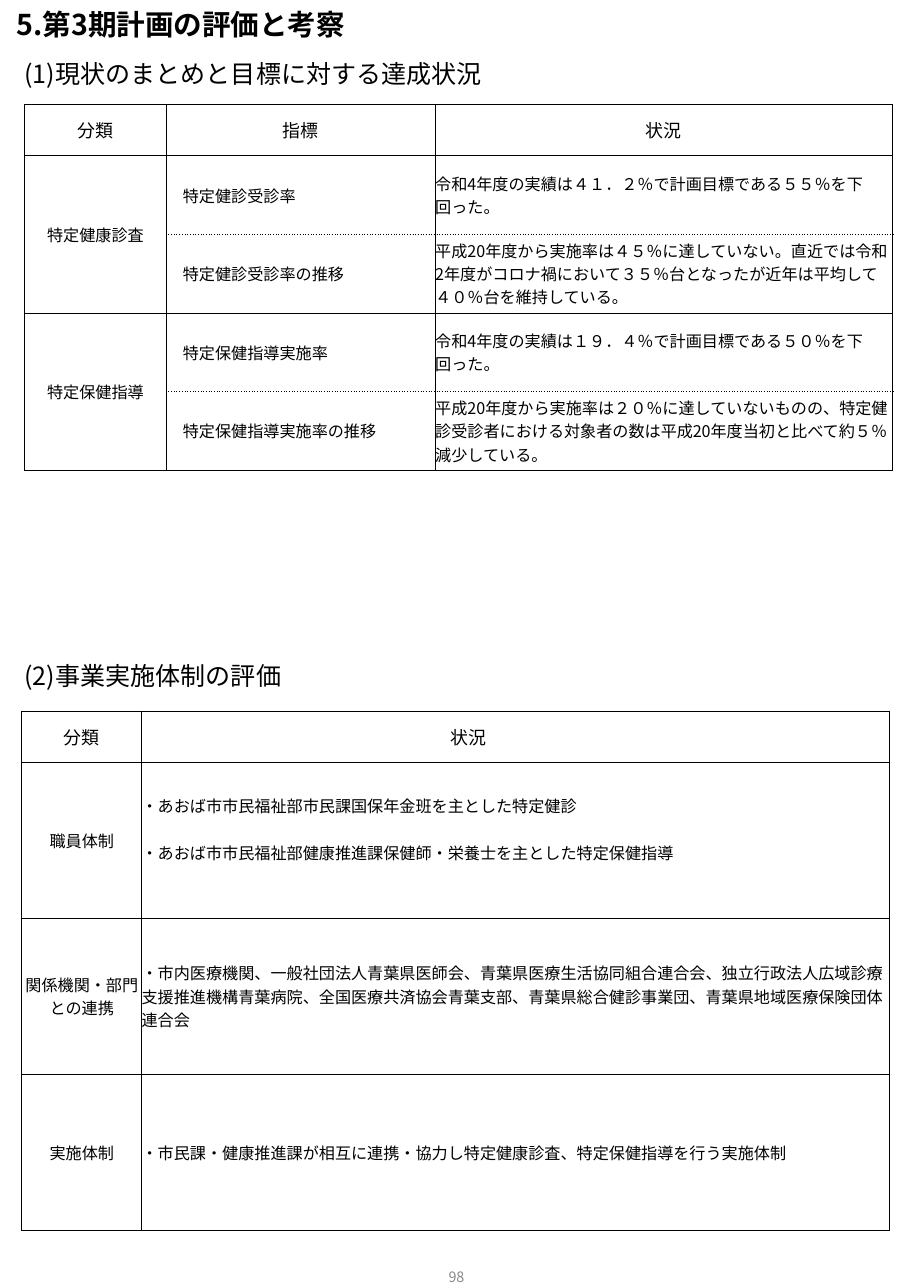
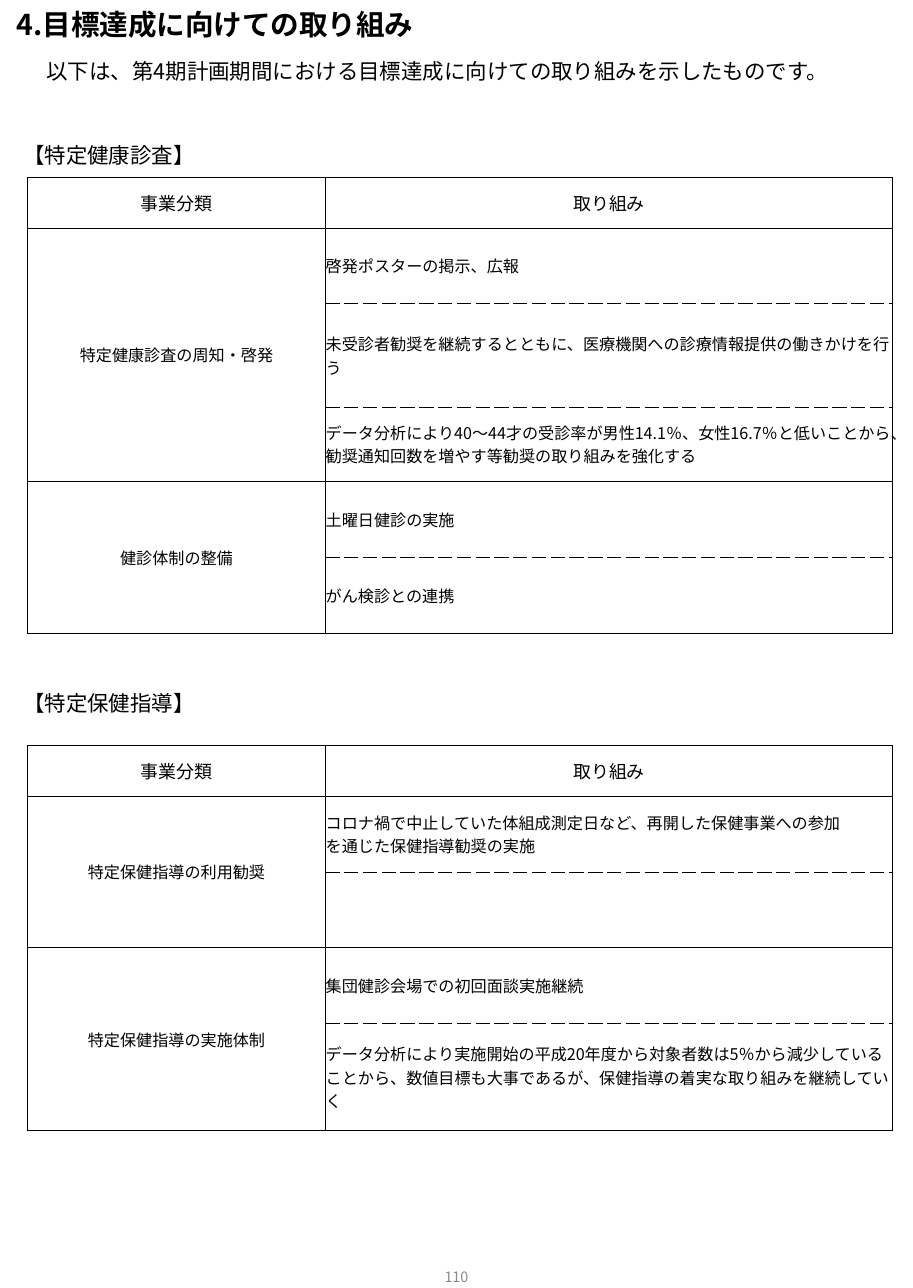
from pptx import Presentation
from pptx.dml.color import RGBColor
from pptx.enum.lang import MSO_LANGUAGE_ID
from pptx.enum.text import MSO_ANCHOR, PP_ALIGN
from pptx.oxml.ns import qn
from pptx.util import Inches, Pt
from lxml.etree import SubElement

BLACK = RGBColor(0x00, 0x00, 0x00)
PAGE_GRAY = RGBColor(0x89, 0x89, 0x89)
FONT = "Noto Sans CJK JP"
BORDER_WIDTH = Pt(0.5)
BLANK_LINE = Pt(13)
INDENT = 0.13


def add_run(paragraph, text, size, color=BLACK, bold=False):
    run = paragraph.add_run()
    run.text = text
    font = run.font
    font.size = Pt(size)
    font.bold = bold
    font.color.rgb = color
    font.name = FONT
    font.language_id = MSO_LANGUAGE_ID.JAPANESE
    SubElement(run._r.get_or_add_rPr(), qn("a:ea"), typeface=FONT)


def add_text(slide, text, left, top, width, height, size, color=BLACK, bold=False,
             align=PP_ALIGN.LEFT, anchor=MSO_ANCHOR.MIDDLE, inset=0, spacing=None):
    frame = slide.shapes.add_textbox(
        Inches(left), Inches(top), Inches(width), Inches(height)).text_frame
    frame.word_wrap = True
    frame.vertical_anchor = anchor
    frame.margin_left = Inches(inset)
    paragraph = frame.paragraphs[0]
    paragraph.alignment = align
    paragraph.line_spacing = spacing
    add_run(paragraph, text, size, color, bold)


def add_title(slide, text):
    add_text(slide, text, 0.13, 0, 6.9, 0.37, 16, bold=True)


def add_lead(slide, text, top, size, inset=0):
    add_text(slide, text, 0.19, top, 6.82, 0.36, size, align=PP_ALIGN.JUSTIFY,
             anchor=MSO_ANCHOR.TOP, inset=inset, spacing=1.25)


def add_label(slide, text, top):
    add_text(slide, text, 0.18, top, 6.32, 0.3, 12)


def add_page_number(slide, number):
    add_text(slide, str(number), 2.72, 9.65, 1.65, 0.53, 8, PAGE_GRAY,
             align=PP_ALIGN.CENTER, inset=0.1)


def set_borders(cell, top="solid", bottom="solid"):
    cell.fill.background()
    properties = cell._tc.get_or_add_tcPr()
    edges = {"lnL": "solid", "lnR": "solid", "lnT": top, "lnB": bottom}
    for position, (edge, dash) in enumerate(edges.items()):
        line = SubElement(properties, qn(f"a:{edge}"), w=str(BORDER_WIDTH))
        fill = SubElement(line, qn("a:solidFill"))
        SubElement(fill, qn("a:srgbClr"), val=str(BLACK))
        SubElement(line, qn("a:prstDash"), val=dash)
        properties.insert(position, line)


def fill_cell(cell, text, size=9, align=PP_ALIGN.LEFT, sides=0, ends=0, gap=0):
    cell.vertical_anchor = MSO_ANCHOR.MIDDLE
    cell.margin_left = cell.margin_right = Inches(sides)
    cell.margin_top = cell.margin_bottom = Inches(ends)
    for index, line in enumerate(text.split("\n")):
        frame = cell.text_frame
        paragraph = frame.add_paragraph() if index else frame.paragraphs[0]
        paragraph.alignment = align
        if index and gap:
            paragraph.space_before = gap
        if line:
            add_run(paragraph, line, size)


def add_grouped_table(slide, left, top, widths, heights, headers, groups,
                      divider="solid", gap=0):
    table = slide.shapes.add_table(
        len(heights), len(widths), Inches(left), Inches(top),
        Inches(sum(widths)), Inches(sum(heights))).table
    table.first_row = table.horz_banding = False
    for column, width in zip(table.columns, widths):
        column.width = Inches(width)
    for row, height in zip(table.rows, heights):
        row.height = Inches(height)
    for column, header in enumerate(headers):
        cell = table.cell(0, column)
        fill_cell(cell, header, 10, PP_ALIGN.CENTER, 0.04, 0.05)
        set_borders(cell)
    first = 1
    for category, entries in groups:
        last = first + len(entries) - 1
        for row, entry in enumerate(entries, first):
            set_borders(table.cell(row, 0))
            for column, text in enumerate(entry, 1):
                cell = table.cell(row, column)
                fill_cell(cell, text, gap=gap)
                set_borders(cell, "solid" if row == first else divider,
                            "solid" if row == last else divider)
        if last > first:
            table.cell(first, 0).merge(table.cell(last, 0))
        fill_cell(table.cell(first, 0), category, align=PP_ALIGN.CENTER)
        first = last + 1
    return table


def build_evaluation(slide):
    add_title(slide, "5.第3期計画の評価と考察")
    add_lead(slide, "(1)現状のまとめと目標に対する達成状況", 0.35, 14)
    achievements = [
        ("特定健康診査", [
            ("特定健診受診率",
             "令和4年度の実績は４１．２％で計画目標である５５％を下回った。"),
            ("特定健診受診率の推移",
             "平成20年度から実施率は４５％に達していない。直近では令和2年度が"
             "コロナ禍において３５％台となったが近年は平均して４０％台を維持している。"),
        ]),
        ("特定保健指導", [
            ("特定保健指導実施率",
             "令和4年度の実績は１９．４％で計画目標である５０％を下回った。"),
            ("特定保健指導実施率の推移",
             "平成20年度から実施率は２０％に達していないものの、特定健診受診者における"
             "対象者の数は平成20年度当初と比べて約５％減少している。"),
        ]),
    ]
    achievement_table = add_grouped_table(
        slide, 0.19, 0.81, [1.1, 2.09, 3.55], [0.4] + [0.61] * 4,
        ["分類", "指標", "状況"], achievements, "dot")
    for row in range(1, 5):
        achievement_table.cell(row, 1).margin_left = Inches(INDENT)

    add_lead(slide, "(2)事業実施体制の評価", 5.02, 14)
    organization = [
        ("職員体制", [(
            "・あおば市市民福祉部市民課国保年金班を主とした特定健診\n"
            "・あおば市市民福祉部健康推進課保健師・栄養士を主とした特定保健指導",)]),
        ("関係機関・部門との連携", [(
            "・市内医療機関、一般社団法人青葉県医師会、青葉県医療生活協同組合連合会、"
            "独立行政法人広域診療支援推進機構青葉病院、全国医療共済協会青葉支部、"
            "青葉県総合健診事業団、青葉県地域医療保険団体連合会",)]),
        ("実施体制", [(
            "・市民課・健康推進課が相互に連携・協力し特定健康診査、"
            "特定保健指導を行う実施体制",)]),
    ]
    organization_table = add_grouped_table(
        slide, 0.17, 5.52, [0.93, 5.81], [0.4] + [1.21] * 3,
        ["分類", "状況"], organization, gap=BLANK_LINE)
    status_header = organization_table.cell(0, 1)
    status_header.text_frame.paragraphs[0].alignment = PP_ALIGN.LEFT
    status_header.margin_left = Inches(2.4)
    organization_table.cell(1, 1).margin_bottom = BLANK_LINE
    add_page_number(slide, 98)


def build_initiatives(slide):
    add_title(slide, "4.目標達成に向けての取り組み")
    add_lead(slide, "以下は、第4期計画期間における目標達成に向けての取り組みを示したものです。",
             0.35, 12, inset=0.17)
    checkups = [
        ("特定健康診査の周知・啓発", [
            ("啓発ポスターの掲示、広報",),
            ("未受診者勧奨を継続するとともに、医療機関への診療情報提供の働きかけを行う",),
            ("データ分析により40～44才の受診率が男性14.1％、女性16.7％と低いことから、"
             "勧奨通知回数を増やす等勧奨の取り組みを強化する",),
        ]),
        ("健診体制の整備", [("土曜日健診の実施",), ("がん検診との連携",)]),
    ]
    guidance = [
        ("特定保健指導の利用勧奨", [
            ("コロナ禍で中止していた体組成測定日など、再開した保健事業への参加\n"
             "を通じた保健指導勧奨の実施",),
            ("",),
        ]),
        ("特定保健指導の実施体制", [
            ("集団健診会場での初回面談実施継続",),
            ("データ分析により実施開始の平成20年度から対象者数は5％から減少していることから、"
             "数値目標も大事であるが、保健指導の着実な取り組みを継続していく",),
        ]),
    ]
    sections = [
        ("【特定健康診査】", 1.05, 1.38, [0.39, 0.59, 0.8, 0.58, 0.59, 0.59], checkups),
        ("【特定保健指導】", 5.31, 5.79, [0.39, 0.59, 0.59, 0.59, 0.83], guidance),
    ]
    for label, label_top, table_top, heights, groups in sections:
        add_label(slide, label, label_top)
        add_grouped_table(slide, 0.21, table_top, [2.32, 4.4], heights,
                          ["事業分類", "取り組み"], groups, "dash")
    add_page_number(slide, 110)


def main():
    presentation = Presentation()
    presentation.slide_width = Inches(7.09)
    presentation.slide_height = Inches(10)
    for build in (build_evaluation, build_initiatives):
        build(presentation.slides.add_slide(presentation.slide_layouts[6]))
    presentation.save("out.pptx")


if __name__ == "__main__":
    main()
